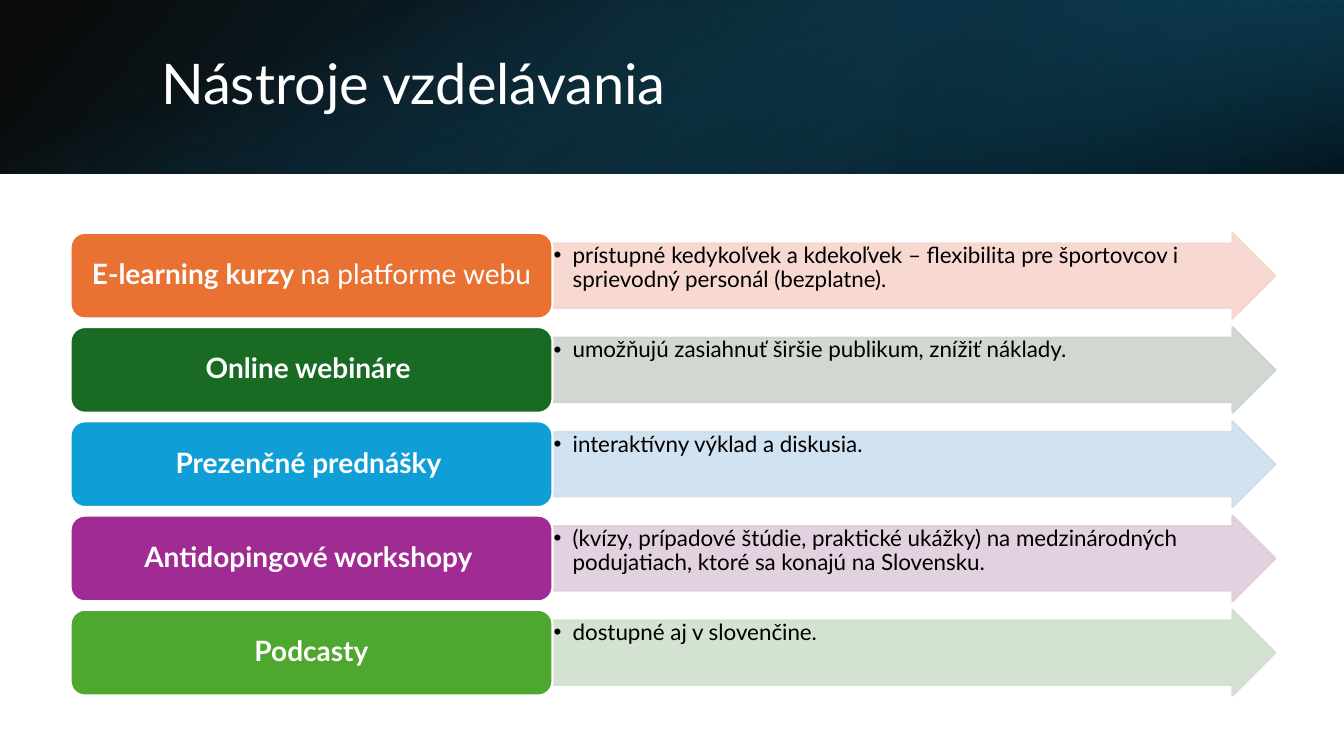
from lxml import etree
from pptx import Presentation
from pptx.dml.color import RGBColor
from pptx.enum import shapes as kinds, text as txt
from pptx.oxml.ns import nsdecls, qn
from pptx.oxml import parse_xml
from pptx.util import Inches, Pt

# Content
TITLE = "Nástroje vzdelávania"
WHITE, BLACK = RGBColor(255, 255, 255), RGBColor(0, 0, 0)
# Label runs (text, bold), description, label colour, arrow colour
TOOLS = [
    ([("E‑learning kurzy ", True), ("na platforme webu", False)],
     "prístupné kedykoľvek a kdekoľvek – flexibilita pre športovcov i sprievodný personál (bezplatne).",
     RGBColor(0xE9, 0x71, 0x32), RGBColor(0xF7, 0xD5, 0xCE)),
    ([("Online webináre ", True)],
     "umožňujú zasiahnuť širšie publikum, znížiť náklady.",
     RGBColor(0x19, 0x6B, 0x24), RGBColor(0xCC, 0xD4, 0xCD)),
    ([("Prezenčné prednášky ", True)],
     "interaktívny výklad a diskusia.",
     RGBColor(0x0F, 0x9E, 0xD5), RGBColor(0xCC, 0xDF, 0xEF)),
    ([("Antidopingové workshopy ", True)],
     "(kvízy, prípadové štúdie, praktické ukážky) na medzinárodných podujatiach, ktoré sa konajú na Slovensku.",
     RGBColor(0xA0, 0x2B, 0x93), RGBColor(0xDF, 0xCD, 0xDC)),
    ([("Podcasty", True)],
     "dostupné aj v slovenčine.",
     RGBColor(0x4E, 0xA7, 0x2E), RGBColor(0xD0, 0xE1, 0xCD)),
]
# Header layers: box, rotation, flipped, gradient angle, stops (position, colour, opacity)
HEADER = [
    ((0, 0, 13.33, 1.72), 0, True, 140, [(0, "000000", 96), (100, "104862", 100)]),
    ((8.89, 0, 4.44, 1.72), 180, True, 320, [(19, "0B3041", 68), (100, "156082", 79)]),
    ((5.8, -5.8, 1.72, 13.33), 90, False, 340, [(23, "156082", 0), (99, "000000", 74)]),
]

# Layout
FIRST_TOP, PITCH, ROW_HEIGHT = 2.31, 0.935, 0.85
LABEL_LEFT, LABEL_WIDTH = 0.7, 4.78
ARROW_LEFT, ARROW_WIDTH = LABEL_LEFT + LABEL_WIDTH, 7.17
FONT = "Lato"

prs = Presentation()
prs.slide_width, prs.slide_height = Inches(13.33), Inches(7.5)
slide = prs.slides.add_slide(prs.slide_layouts[6])


def add_block(kind, box):
    block = slide.shapes.add_shape(kind, *map(Inches, box))
    block.shadow.inherit = False
    return block


def paint(block, fill, line, opacity=100):
    block.fill.solid()
    block.fill.fore_color.rgb = fill
    block.line.color.rgb = line
    block.line.width = Pt(1.5)
    if opacity < 100:
        for colour in block._element.spPr.iter(qn("a:srgbClr")):
            etree.SubElement(colour, qn("a:alpha"), val=str(opacity * 1000))


def add_text(box, runs, size, colour, insets, anchor, align):
    frame = slide.shapes.add_textbox(*map(Inches, box)).text_frame
    side, end = map(Inches, insets)
    settings = {"word_wrap": True, "vertical_anchor": anchor, "margin_left": side,
                "margin_right": side, "margin_top": end, "margin_bottom": end}
    for key, value in settings.items():
        setattr(frame, key, value)
    para = frame.paragraphs[0]
    para.alignment, para.line_spacing = align, 0.9
    for words, bold in runs:
        run = para.add_run()
        run.text = words
        run.font.color.rgb = colour
        for key, value in {"name": FONT, "size": Pt(size), "bold": bold}.items():
            setattr(run.font, key, value)
    return para


def add_bullet(para):
    props = para._p.get_or_add_pPr()
    props.set("marL", str(Inches(0.19)))
    props.set("indent", str(Inches(-0.19)))
    etree.SubElement(props, qn("a:buFont"), typeface="Arial")
    etree.SubElement(props, qn("a:buChar"), char="•")


# Header band
for box, rotation, flipped, angle, stops in HEADER:
    layer = add_block(kinds.MSO_SHAPE.RECTANGLE, box)
    layer.rotation = rotation
    layer.line.fill.background()
    props = layer._element.spPr
    if flipped:
        props.find(qn("a:xfrm")).set("flipH", "1")
    marks = "".join(
        f'<a:gs pos="{pos * 1000}"><a:srgbClr val="{colour}"><a:alpha val="{alpha * 1000}"/></a:srgbClr></a:gs>'
        for pos, colour, alpha in stops)
    props.find(qn("a:prstGeom")).addnext(parse_xml(
        f'<a:gradFill {nsdecls("a")} rotWithShape="1"><a:gsLst>{marks}</a:gsLst>'
        f'<a:lin ang="{angle * 60000}" scaled="0"/></a:gradFill>'))

add_text((1.5, 0.38, 10.98, 0.96), [(TITLE, False)], 40, WHITE, (0.1, 0.05),
         txt.MSO_ANCHOR.MIDDLE, txt.PP_ALIGN.LEFT)

# One row per tool
for row, (label, description, label_colour, arrow_colour) in enumerate(TOOLS):
    top = FIRST_TOP + row * PITCH

    arrow = add_block(kinds.MSO_SHAPE.RIGHT_ARROW, (ARROW_LEFT, top, ARROW_WIDTH, ROW_HEIGHT))
    arrow.adjustments[0], arrow.adjustments[1] = 0.75, 0.5
    paint(arrow, arrow_colour, arrow_colour, opacity=90)
    add_bullet(add_text((ARROW_LEFT, top + 0.105, 6.85, 0.64), [(description, False)], 16, BLACK,
                        (0.01, 0.01), txt.MSO_ANCHOR.TOP, txt.PP_ALIGN.LEFT))

    plate = add_block(kinds.MSO_SHAPE.ROUNDED_RECTANGLE, (LABEL_LEFT, top, LABEL_WIDTH, ROW_HEIGHT))
    paint(plate, label_colour, WHITE)
    add_text((LABEL_LEFT + 0.04, top + 0.04, LABEL_WIDTH - 0.08, ROW_HEIGHT - 0.08), label, 20, WHITE,
             (0.08, 0.04), txt.MSO_ANCHOR.MIDDLE, txt.PP_ALIGN.CENTER)

prs.save("out.pptx")
